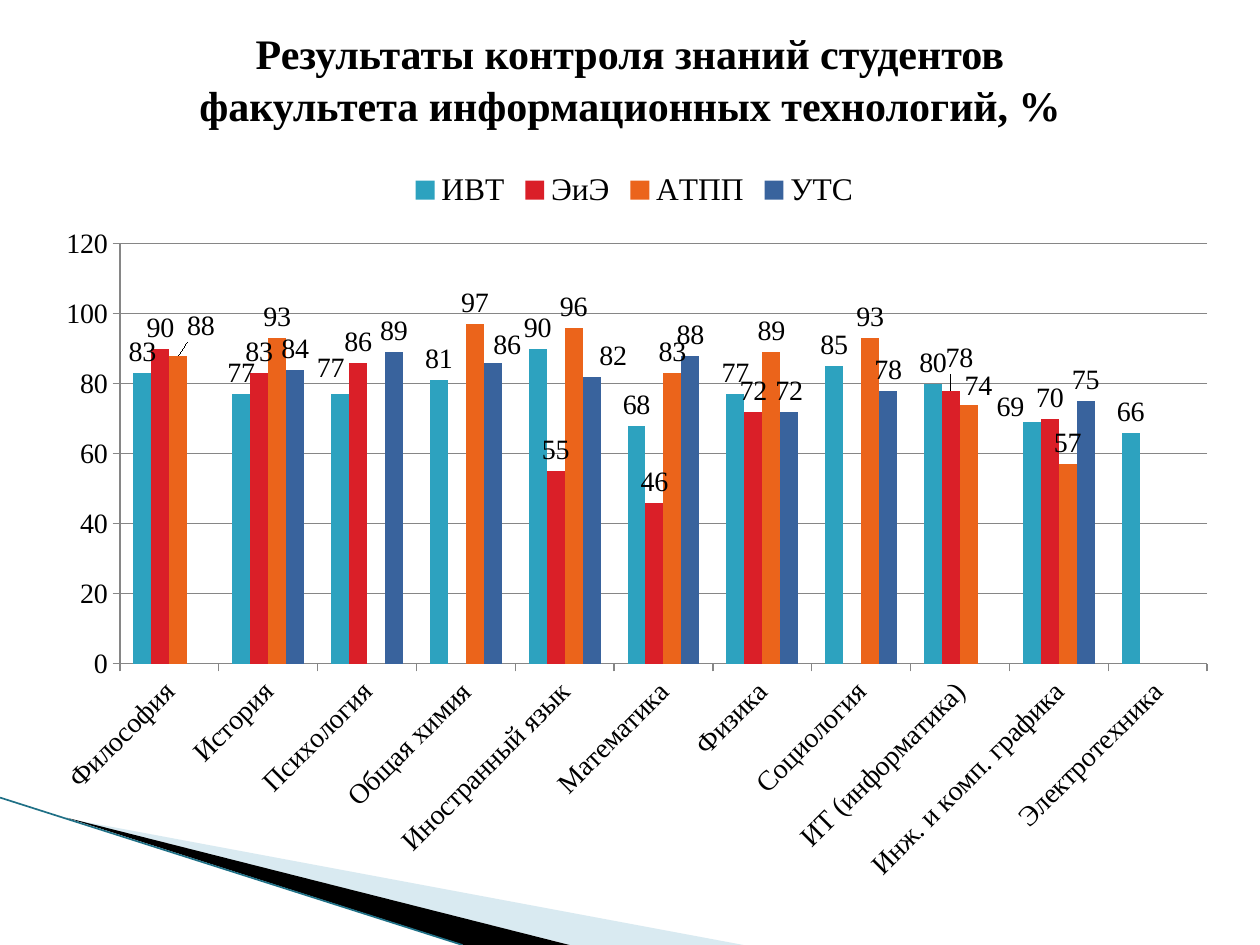
import pptx
import pptx.chart.data
import pptx.dml.color
import pptx.enum.chart
import pptx.enum.shapes
import pptx.enum.text
import pptx.oxml
import pptx.oxml.ns
import pptx.util

COLORS = {
    "text": "000000", "grid": "868686", "edge": "1F7086",
    "pale": "A0CBDC", "black": "000000",
    "ИВТ": "2DA2BF", "ЭиЭ": "DA1F28", "АТПП": "EB641B", "УТС": "39639D",
}
SUBJECTS = [
    "Философия", "История", "Психология", "Общая химия", "Иностранный язык",
    "Математика", "Физика", "Социология", "ИТ (информатика)",
    "Инж. и комп. графика", "Электротехника",
]
SCORES = {
    "ИВТ": [83, 77, 77, 81, 90, 68, 77, 85, 80, 69, 66],
    "ЭиЭ": [90, 83, 86, None, 55, 46, 72, None, 78, 70, None],
    "АТПП": [88, 93, None, 97, 96, 83, 89, 93, 74, 57, None],
    "УТС": [None, 84, 89, 86, 82, 88, 72, 78, None, 75, None],
}
# Labels moved aside: subject index -> shift as percent of the chart's size
LABEL_SHIFTS = {
    "ИВТ": {2: (-0.8, -0.7), 9: (-1.8, 0.8)},
    "ЭиЭ": {8: (0.7, -1.6)},
    "АТПП": {0: (1.9, -1.2), 8: (0.8, 0.3)},
    "УТС": {3: (1.2, 0.4), 4: (1.8, 0)},
}
COLUMNS, ROWS = 100, 75


def color(name):
    return pptx.dml.color.RGBColor.from_string(COLORS[name])


def layout_xml(x, y, w=None, h=None):
    """Manual chart layout: an inner plot area, or a label shift without a size."""
    parts = [("layoutTarget", "inner"), ("xMode", "edge"), ("yMode", "edge")] if w else []
    parts += [("x", x), ("y", y)] + ([("w", w), ("h", h)] if w else [])
    body = "".join(f'<c:{tag} val="{value}"/>' for tag, value in parts)
    return pptx.oxml.parse_xml(
        f'<c:layout {pptx.oxml.ns.nsdecls("c")}><c:manualLayout>{body}</c:manualLayout></c:layout>')


class ReportSlide:
    font_name = "Times New Roman"

    def __init__(self, deck):
        self.slide = deck.slides.add_slide(deck.slide_layouts[6])
        self.column = deck.slide_width / COLUMNS
        self.row = deck.slide_height / ROWS

    def place(self, *lengths):
        """Turn alternating columns and rows into lengths."""
        return [pptx.util.Emu(round(n * (self.row if i % 2 else self.column)))
                for i, n in enumerate(lengths)]

    def style(self, font, size, bold=False):
        font.name, font.size, font.bold = self.font_name, pptx.util.Pt(size), bold
        font.color.rgb = color("text")

    def wedge(self, fill, corners, opacity=100):
        points = [self.place(*corner) for corner in corners]
        builder = self.slide.shapes.build_freeform(*points[0])
        builder.add_line_segments(points[1:], close=True)
        shape = builder.convert_to_shape()
        shape.shadow.inherit = False
        shape.line.fill.background()
        shape.fill.solid()
        shape.fill.fore_color.rgb = color(fill)
        if opacity < 100:
            rgb = shape.fill._xPr.find(".//" + pptx.oxml.ns.qn("a:srgbClr"))
            rgb.append(pptx.oxml.parse_xml(
                f'<a:alpha {pptx.oxml.ns.nsdecls("a")} val="{opacity * 1000}"/>'))

    def edge(self, *ends):
        line = self.slide.shapes.add_connector(
            pptx.enum.shapes.MSO_CONNECTOR.STRAIGHT, *self.place(*ends))
        line.line.color.rgb = color("edge")
        line.line.width = pptx.util.Pt(0.95)
        line._element.spPr.append(
            pptx.oxml.parse_xml(f'<a:effectLst {pptx.oxml.ns.nsdecls("a")}/>'))

    def title(self, lines, *box):
        frame = self.slide.shapes.add_textbox(*self.place(*box)).text_frame
        frame.word_wrap = True
        frame.margin_top = frame.margin_bottom = 0
        frame.vertical_anchor = pptx.enum.text.MSO_ANCHOR.TOP
        heading = frame.paragraphs[0]
        heading.alignment = pptx.enum.text.PP_ALIGN.CENTER
        heading.line_spacing = 1.04
        for i, line in enumerate(lines):
            if i:
                heading.add_line_break()
            run = heading.add_run()
            run.text = line
            self.style(run.font, 24, bold=True)

    def score_chart(self, *box):
        data = pptx.chart.data.CategoryChartData()
        data.categories = SUBJECTS
        for group, scores in SCORES.items():
            data.add_series(group, scores)
        chart = self.slide.shapes.add_chart(
            pptx.enum.chart.XL_CHART_TYPE.COLUMN_CLUSTERED, *self.place(*box), data).chart
        self.style(chart.font, 16)
        chart.has_title = False

        # Legend
        chart.has_legend = True
        chart.legend.position = pptx.enum.chart.XL_LEGEND_POSITION.TOP
        chart.legend.include_in_layout = False
        self.style(chart.legend.font, 18)

        # Plot area and axes
        plot_area = chart._chartSpace.chart.plotArea
        for old in plot_area.findall(pptx.oxml.ns.qn("c:layout")):
            plot_area.remove(old)
        plot_area.insert(0, layout_xml(0.068, 0.117, 0.913, 0.569))
        subjects, percent = chart.category_axis, chart.value_axis
        percent.minimum_scale, percent.maximum_scale, percent.major_unit = 0, 120, 20
        percent.has_major_gridlines = True
        for line in (subjects.format.line, percent.format.line,
                     percent.major_gridlines.format.line):
            line.color.rgb = color("grid")
            line.width = pptx.util.Pt(0.75)
        for axis in (subjects, percent):
            axis.major_tick_mark = pptx.enum.chart.XL_TICK_MARK.OUTSIDE
            self.style(axis.tick_labels.font, 16)
        subjects._element.txPr.bodyPr.set("rot", "-2700000")

        # Columns and their labels
        plot = chart.plots[0]
        plot.gap_width, plot.overlap, plot.vary_by_categories = 150, 0, False
        for group in plot.series:
            group.format.fill.solid()
            group.format.fill.fore_color.rgb = color(group.name)
            self.label(group.data_labels)
            group.data_labels.show_value = True
            for index, (x, y) in LABEL_SHIFTS[group.name].items():
                self.label(group.points[index].data_label)
                spot = group._element.xpath(f'c:dLbls/c:dLbl/c:idx[@val="{index}"]')[0]
                spot.addnext(layout_xml(x / 100, y / 100))

    def label(self, label):
        self.style(label.font, 16)
        label.position = pptx.enum.chart.XL_LABEL_POSITION.OUTSIDE_END


def main():
    deck = pptx.Presentation()
    deck.slide_width, deck.slide_height = pptx.util.Inches(10), pptx.util.Inches(7.5)
    report = ReportSlide(deck)

    # Corner decoration
    report.wedge("pale", [(5.5, 65), (59, 75), (45.2, 75)], opacity=40)
    report.wedge("black", [(5.3, 64.9), (45.2, 75), (36.8, 75)])
    report.edge(0, 63.3, 36.7, 75)

    # Heading and results
    report.title(["Результаты контроля знаний студентов",
                  "факультета информационных технологий, %"], 5, 2, 90, 9.5)
    report.score_chart(3.1, 12.5, 94.5, 58.6)

    deck.save("out.pptx")


if __name__ == "__main__":
    main()
